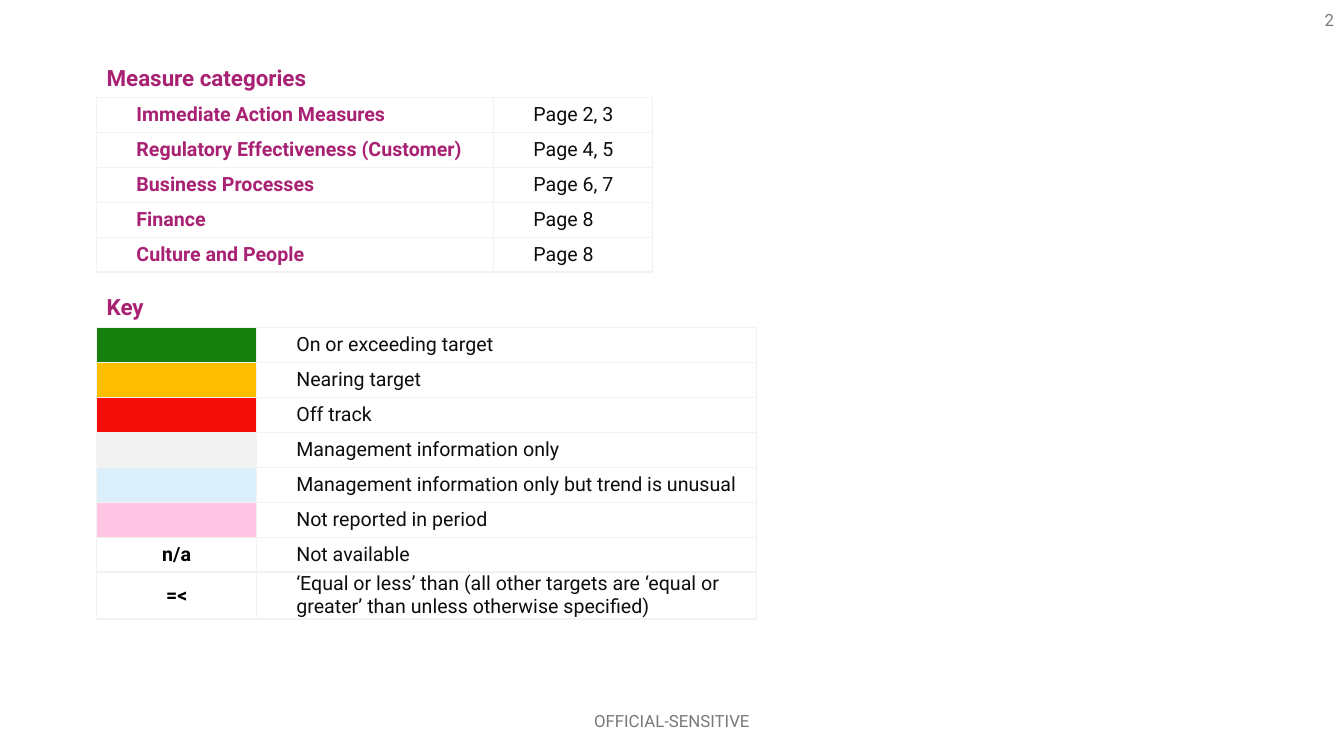
from lxml import etree
from pptx import Presentation
from pptx.dml.color import RGBColor
from pptx.enum.text import MSO_ANCHOR, PP_ALIGN
from pptx.oxml.ns import qn
from pptx.util import Pt

LEFT, CENTER, RIGHT = PP_ALIGN.LEFT, PP_ALIGN.CENTER, PP_ALIGN.RIGHT
TOP, MIDDLE = MSO_ANCHOR.TOP, MSO_ANCHOR.MIDDLE

FONT = "Roboto"
MAGENTA = RGBColor(0xA9, 0x21, 0x73)
INK = RGBColor(0x0D, 0x0D, 0x0D)
BLACK = RGBColor(0, 0, 0)
GREY = RGBColor(0x79, 0x79, 0x79)
WHITE = RGBColor(0xFF, 0xFF, 0xFF)
PALE_GREY = RGBColor(0xF2, 0xF2, 0xF2)
GREEN = RGBColor(0x16, 0x7F, 0x0E)
AMBER = RGBColor(0xFF, 0xBF, 0x00)
RED = RGBColor(0xF5, 0x0D, 0x08)
PALE_BLUE = RGBColor(0xDA, 0xEF, 0xF9)
PINK = RGBColor(0xFF, 0xC5, 0xE2)

CATEGORIES = [
    ("Immediate Action Measures", "Page 2, 3"),
    ("Regulatory Effectiveness (Customer)", "Page 4, 5"),
    ("Business Processes", "Page 6, 7"),
    ("Finance", "Page 8"),
    ("Culture and People", "Page 8"),
]
KEY = [
    ("", GREEN, "On or exceeding target"),
    ("", AMBER, "Nearing target"),
    ("", RED, "Off track"),
    ("", PALE_GREY, "Management information only"),
    ("", PALE_BLUE, "Management information only but trend is unusual"),
    ("", PINK, "Not reported in period"),
    ("n/a", WHITE, "Not available"),
    ("=<", WHITE, "‘Equal or less’ than (all other targets are ‘equal or "
                  "greater’ than unless otherwise specified)"),
]

MARGIN = 69.1
ROW_HEIGHT = 24.95
LAST_KEY_ROW = 33.6
INDENT = 28.35
HEADING_SIZE = (350, 26.6)
LABELS = [
    ("Measure categories", (MARGIN, 42.5), HEADING_SIZE, 16, MAGENTA, True, LEFT, TOP),
    ("Key", (MARGIN, 206), HEADING_SIZE, 16, MAGENTA, True, LEFT, TOP),
    ("2", (744, 0), (216, 28.8), 12, GREY, False, RIGHT, MIDDLE),
    ("OFFICIAL-SENSITIVE", (318, 500.5), (324, 28.8), 12, GREY, False, CENTER, MIDDLE),
]


def write(paragraph, text, size, color, bold, align):
    paragraph.alignment = align
    run = paragraph.add_run()
    run.text = text
    run.font.name = FONT
    run.font.size = Pt(size)
    run.font.bold = bold
    run.font.color.rgb = color


def add_label(slide, text, position, size, font_size, color, bold, align, anchor):
    frame = slide.shapes.add_textbox(*map(Pt, position + size)).text_frame
    frame.word_wrap = True
    frame.vertical_anchor = anchor
    write(frame.paragraphs[0], text, font_size, color, bold, align)


def add_borders(cell):
    properties = cell._tc.get_or_add_tcPr()
    for side in ("lnL", "lnR", "lnT", "lnB"):
        line = etree.SubElement(properties, qn("a:" + side), w=str(Pt(1)))
        fill = etree.SubElement(line, qn("a:solidFill"))
        etree.SubElement(fill, qn("a:srgbClr"), val=str(PALE_GREY))


def add_grid(slide, top, widths, heights, rows):
    table = slide.shapes.add_table(
        len(rows), len(widths), Pt(MARGIN), Pt(top), Pt(sum(widths)), Pt(sum(heights))
    ).table
    table.first_row = table.horz_banding = False
    for column, width in zip(table.columns, widths):
        column.width = Pt(width)
    for row, height, contents in zip(table.rows, heights, rows):
        row.height = Pt(height)
        for cell, (text, fill, color, bold, align) in zip(row.cells, contents):
            cell.margin_left = cell.margin_right = 0
            cell.margin_top = cell.margin_bottom = 0
            cell.vertical_anchor = MIDDLE
            add_borders(cell)
            cell.fill.solid()
            cell.fill.fore_color.rgb = fill
            if text:
                paragraph = cell.text_frame.paragraphs[0]
                write(paragraph, text, 14, color, bold, align)
                if align == LEFT:
                    paragraph._p.get_or_add_pPr().set("marL", str(Pt(INDENT)))


def main():
    deck = Presentation()
    deck.slide_width, deck.slide_height = Pt(960), Pt(540)
    slide = deck.slides.add_slide(deck.slide_layouts[6])

    key_rows = [
        ((symbol, fill, BLACK, True, CENTER), (meaning, WHITE, INK, False, LEFT))
        for symbol, fill, meaning in KEY
    ]
    key_heights = [ROW_HEIGHT] * (len(KEY) - 1) + [LAST_KEY_ROW]
    add_grid(slide, 234, (114.2, 357.2), key_heights, key_rows)

    category_rows = [
        ((category, WHITE, MAGENTA, True, LEFT), (pages, WHITE, INK, False, LEFT))
        for category, pages in CATEGORIES
    ]
    category_heights = [ROW_HEIGHT] * len(CATEGORIES)
    add_grid(slide, 69.6, (283.5, 113.4), category_heights, category_rows)

    for label in LABELS:
        add_label(slide, *label)
    deck.save("out.pptx")


if __name__ == "__main__":
    main()
